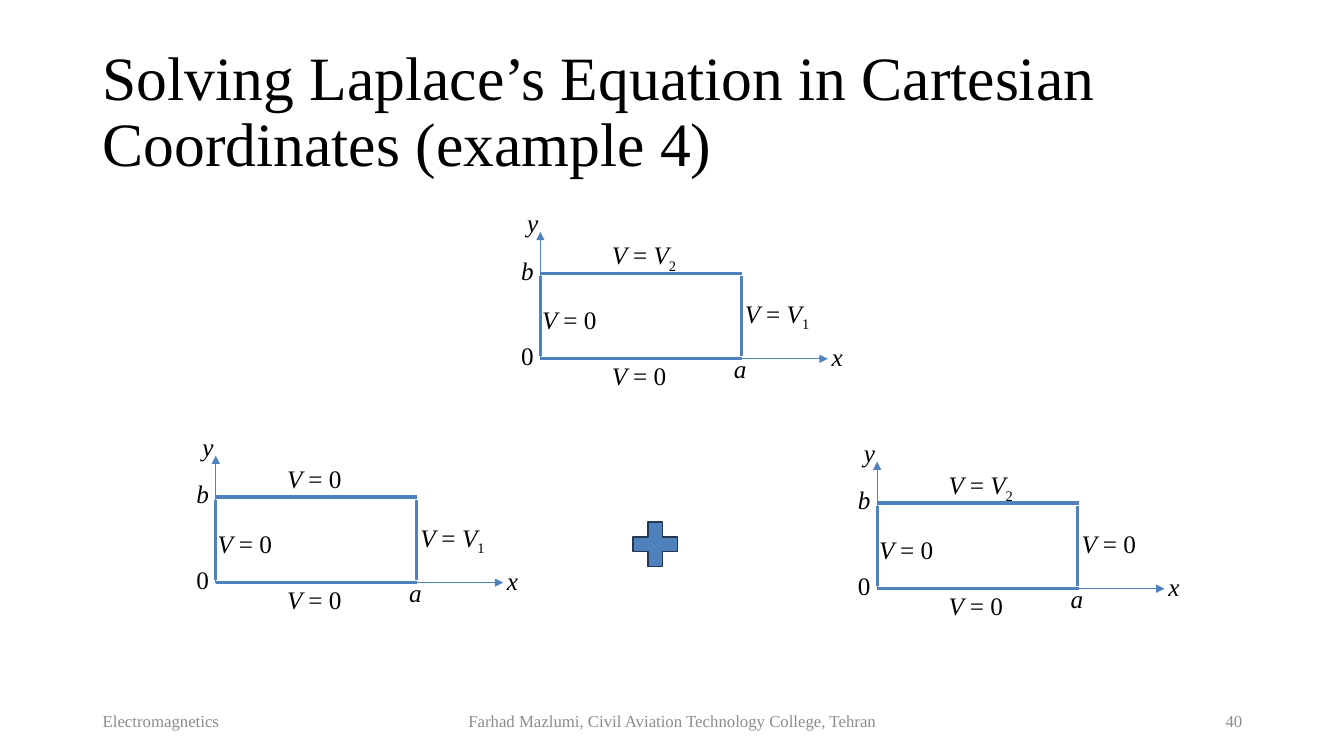
import pptx
import pptx.util
import pptx.dml.color
import pptx.enum.shapes
import pptx.enum.text
from lxml import etree
from pptx.oxml.ns import qn
from pptx.util import Inches

FONT = "Times New Roman"
BLACK, GREY, BLUE, NAVY = "000000", "8C8C8C", "4F81BD", "233953"
ALIGN = pptx.enum.text.PP_ALIGN
MIDDLE = pptx.enum.text.MSO_ANCHOR.MIDDLE

TITLE = "Solving Laplace’s Equation in Cartesian Coordinates (example 4)"
FOOTERS = [  # text, left, width, alignment
    ("Electromagnetics", 0.92, 3, ALIGN.LEFT),
    ("Farhad Mazlumi, Civil Aviation Technology College, Tehran", 4.42, 4.5, ALIGN.CENTER),
    ("40", 9.42, 3, ALIGN.RIGHT),
]

# A label is a list of (text, style) runs
ITALIC = {"italic": True}
ZERO = [("V ", ITALIC), ("= 0", {})]
V1, V2 = ([("V ", ITALIC), ("= ", {}), ("V", ITALIC), (index, {"subscript": True})]
          for index in "12")

PROBLEMS = [  # origin of the axes, potential on each side of the rectangle
    {"origin": (5.36, 3.56), "bottom": ZERO, "top": V2, "left": ZERO, "right": V1},
    {"origin": (2.14, 5.78), "bottom": ZERO, "top": ZERO, "left": ZERO, "right": V1},
    {"origin": (8.70, 5.84), "bottom": ZERO, "top": V2, "left": ZERO, "right": ZERO},
]
PLUS = (6.2, 5.1, 0.6, 0.6)

# Everything below is measured from the origin of the axes
A, B, GAP = 2.0, 0.85, 0.03
AXES = [(0, 0, 0, -1.26), (0, 0, 2.85, 0)]
SIDES = [
    (0, GAP - B, 0, -GAP),
    (0, 0, A, 0),
    (0, -B, A, -B),
    (A - 0.01, GAP - B, A - 0.01, -GAP),
]
AXIS_LABELS = [
    ("x", ITALIC, 2.79, -0.22),
    ("y", ITALIC, -0.23, -1.55),
    ("b", ITALIC, -0.29, -1.08),
    ("0", {}, -0.29, -0.23),
    ("a", ITALIC, 1.82, -0.1),
]
SIDE_LABELS = {"bottom": (0.61, -0.03), "top": (0.61, -1.23),
               "left": (-0.08, -0.59), "right": (1.93, -0.65)}


def color(hex_string):
    return pptx.dml.color.RGBColor.from_string(hex_string)


def add_text(slide, box, runs, size=18, ink=BLACK, anchor=None, **paragraph_format):
    frame = slide.shapes.add_textbox(*map(Inches, box)).text_frame
    frame.word_wrap = True
    frame.vertical_anchor = anchor
    paragraph = frame.paragraphs[0]
    for name, value in paragraph_format.items():
        setattr(paragraph, name, value)
    for text, style in runs:
        run = paragraph.add_run()
        run.text = text
        look = {"name": FONT, "size": pptx.util.Pt(size), "italic": style.get("italic", False)}
        for name, value in look.items():
            setattr(run.font, name, value)
        run.font.color.rgb = color(ink)
        if style.get("subscript"):
            run._r.get_or_add_rPr().set("baseline", "-25000")


def add_line(slide, origin, ends, width, arrow=False):
    x, y = origin
    x1, y1, x2, y2 = ends
    line = slide.shapes.add_connector(
        pptx.enum.shapes.MSO_CONNECTOR.STRAIGHT,
        Inches(x + x1), Inches(y + y1), Inches(x + x2), Inches(y + y2))
    line.line.color.rgb = color(BLUE)
    line.line.width = pptx.util.Pt(width)
    if arrow:
        etree.SubElement(line.line._get_or_add_ln(), qn("a:tailEnd"), type="triangle")
    etree.SubElement(line._element.spPr, qn("a:effectLst"))


def add_problem(slide, problem):
    """Draw the axes, the rectangle and its boundary potentials."""
    origin = x, y = problem["origin"]
    for axis in AXES:
        add_line(slide, origin, axis, 0.5, arrow=True)
    for side in SIDES:
        add_line(slide, origin, side, 2.25)
    for text, style, dx, dy in AXIS_LABELS:
        add_text(slide, (x + dx, y + dy, 0.44, 0.4), [(text, style)])
    for side, (dx, dy) in SIDE_LABELS.items():
        add_text(slide, (x + dx, y + dy, 0.86, 0.4), problem[side])


def add_plus(slide):
    plus = slide.shapes.add_shape(
        pptx.enum.shapes.MSO_SHAPE.MATH_PLUS, *map(Inches, PLUS))
    plus.shadow.inherit = False
    plus.fill.solid()
    plus.fill.fore_color.rgb = color(BLUE)
    plus.line.color.rgb = color(NAVY)
    plus.line.width = pptx.util.Pt(1)


def main():
    deck = pptx.Presentation()
    deck.slide_width, deck.slide_height = Inches(13.33), Inches(7.5)
    slide = deck.slides.add_slide(deck.slide_layouts[6])
    add_text(slide, (0.92, 0.4, 11.5, 1.45), [(TITLE, {})], 44,
             anchor=MIDDLE, line_spacing=0.9)
    for text, left, width, alignment in FOOTERS:
        add_text(slide, (left, 6.95, width, 0.4), [(text, {})], 12, GREY,
                 anchor=MIDDLE, alignment=alignment)
    for problem in PROBLEMS:
        add_problem(slide, problem)
    add_plus(slide)
    deck.save("out.pptx")


if __name__ == "__main__":
    main()
